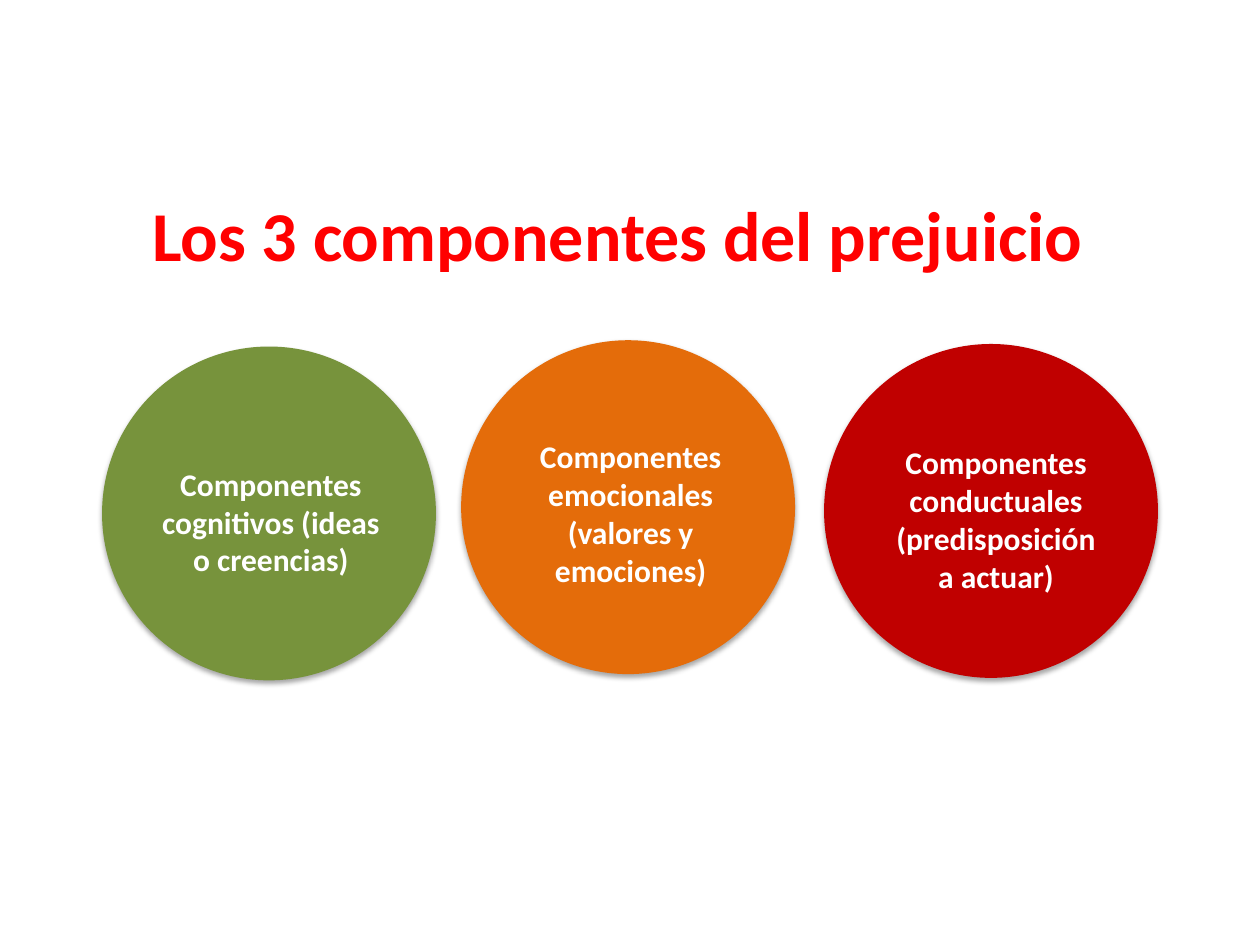
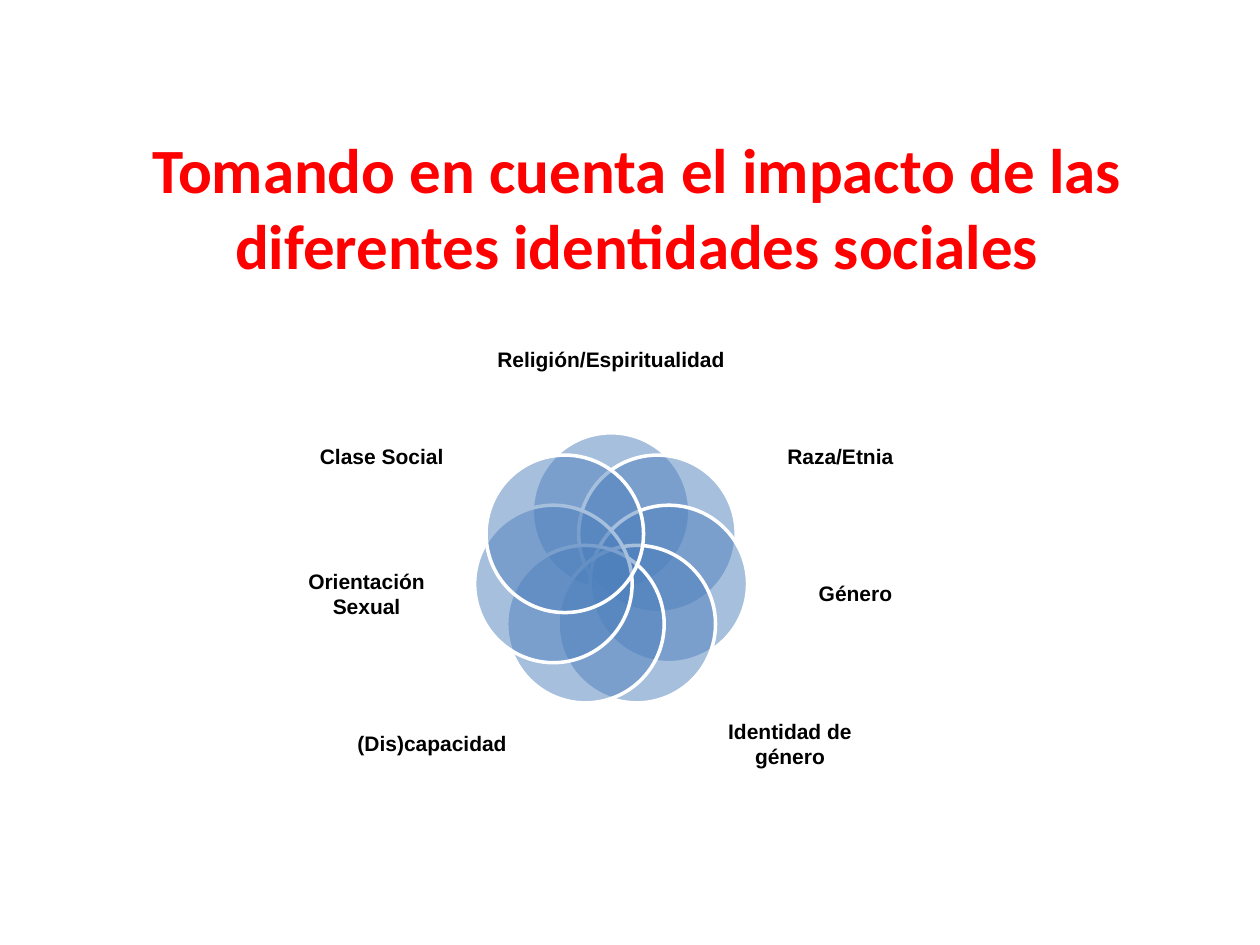
from collections import namedtuple
from math import cos, pi, sin

from lxml.etree import SubElement
from pptx import Presentation
from pptx.dml.color import RGBColor
from pptx.enum.shapes import MSO_SHAPE as Preset
from pptx.enum.text import MSO_ANCHOR as Anchor, PP_ALIGN as Align
from pptx.oxml.ns import qn
from pptx.util import Emu, Inches, Pt

Box = namedtuple("Box", "left top width height")
TextStyle = namedtuple("TextStyle", "font size color")


class Theme:
    title = TextStyle("Calibri", 40, "FF0000")
    long_title = TextStyle("Calibri", 36, "FF0000")
    component = TextStyle("Calibri", 18, "FFFFFF")
    identity = TextStyle("Arial", 12, "000000")
    cognitive, emotional, behavioural = "77933C", "E46C0A", "C00000"
    petal, petal_outline, shadow = "4F81BD", "FFFFFF", "000000"


DISC_SIZE = 2.65
# Colour, disc corner, label box relative to the disc, wording
COMPONENTS = [
    (Theme.cognitive, (0.81, 2.75), Box(0.17, 0.89, 2.15, 1.01),
     "Componentes cognitivos (ideas o creencias)"),
    (Theme.emotional, (3.66, 2.7), Box(0.11, 0.72, 2.28, 1.31),
     "Componentes emocionales (valores y emociones)"),
    (Theme.behavioural, (6.54, 2.73), Box(0.25, 0.74, 2.04, 1.31),
     "Componentes conductuales (predisposición a actuar)"),
]

PETAL_SIZE, PETAL_ORBIT = 1.25, 0.47
IDENTITIES = ["Religión/Espiritualidad", "Raza/Etnia", "Género", "Identidad de género",
              "(Dis)capacidad", "Orientación Sexual", "Clase Social"]
# Label centres relative to the flower's centre, from the top down its right side
LABEL_ROWS = [Box(0, -1.68, 1.93, 1.21), Box(1.82, -0.91, 1.36, 0.85),
              Box(1.94, 0.18, 1.33, 0.9), Box(1.42, 1.37, 1.44, 0.83)]


def inches(box):
    return [Inches(value) for value in box]


def add_text(shapes, box, text, style, align=Align.CENTER, indent=0):
    frame = shapes.add_textbox(*inches(box)).text_frame
    frame.word_wrap = True
    para = frame.paragraphs[0]
    para.text = text
    para.alignment = align
    if indent:
        para._p.get_or_add_pPr().set("marL", str(Inches(indent)))
    font = para.font
    font.name, font.size, font.bold = style.font, Pt(style.size), True
    font.color.rgb = RGBColor.from_string(style.color)
    return frame


def add_disc(shapes, box, color):
    disc = shapes.add_shape(Preset.OVAL, *inches(box))
    disc.shadow.inherit = False
    disc.fill.solid()
    disc.fill.fore_color.rgb = RGBColor.from_string(color)
    disc.line.fill.background()
    return disc


def set_alpha(color_element, percent):
    SubElement(color_element, qn("a:alpha"), val=str(percent * 1000))


def drop_shadow(shape):
    effects = shape._element.spPr.find(qn("a:effectLst"))
    shadow = SubElement(effects, qn("a:outerShdw"), blurRad=str(Pt(3.1)),
                        dist=str(Pt(1.8)), dir=str(90 * 60000), rotWithShape="0")
    set_alpha(SubElement(shadow, qn("a:srgbClr"), val=Theme.shadow), 35)


def add_component(page, color, corner, label, text):
    left, top = corner
    shapes = page.shapes.add_group_shape().shapes
    drop_shadow(add_disc(shapes, Box(left, top, DISC_SIZE, DISC_SIZE), color))
    label_box = label._replace(left=left + label.left, top=top + label.top)
    add_text(shapes, label_box, text, Theme.component, indent=0.19)


def add_petal(shapes, center_x, center_y):
    box = Box(center_x - PETAL_SIZE / 2, center_y - PETAL_SIZE / 2, PETAL_SIZE, PETAL_SIZE)
    petal = add_disc(shapes, box, Theme.petal)
    set_alpha(petal._element.spPr.find(qn("a:solidFill")).find(qn("a:srgbClr")), 50)
    petal.line.color.rgb = RGBColor.from_string(Theme.petal_outline)
    petal.line.width = Pt(2)


def add_identity_label(shapes, center_x, center_y, size, text):
    width, height = size
    box = Box(center_x - width / 2, center_y - height / 2, width, height)
    frame = add_text(shapes, box, text, Theme.identity)
    frame.vertical_anchor = Anchor.MIDDLE
    frame.margin_left = frame.margin_right = frame.margin_top = frame.margin_bottom = Emu(0)


def add_identity_flower(page, center_x, center_y):
    """Overlapping petals, clockwise from the top; left labels mirror the right ones."""
    shapes = page.shapes.add_group_shape().shapes
    mirrored = [row._replace(left=-row.left) for row in reversed(LABEL_ROWS[1:])]
    for index, (text, row) in enumerate(zip(IDENTITIES, LABEL_ROWS + mirrored)):
        angle = 2 * pi * index / len(IDENTITIES)
        add_petal(shapes, center_x + PETAL_ORBIT * sin(angle),
                  center_y - PETAL_ORBIT * cos(angle))
        add_identity_label(shapes, center_x + row.left, center_y + row.top, row[2:], text)


def build_components_slide(page):
    add_text(page.shapes, Box(1.11, 1.47, 9, 0.9), "Los 3 componentes del prejuicio",
             Theme.title, Align.LEFT)
    for component in COMPONENTS:
        add_component(page, *component)


def build_identities_slide(page):
    add_text(page.shapes, Box(0.93, 0.99, 8.25, 0.98),
             "Tomando en cuenta el impacto de las diferentes identidades sociales",
             Theme.long_title)
    add_identity_flower(page, 4.85, 4.53)


def main():
    deck = Presentation()
    deck.slide_width, deck.slide_height = Inches(10), Inches(7.5)
    blank = deck.slide_layouts[6]
    for build in (build_components_slide, build_identities_slide):
        build(deck.slides.add_slide(blank))
    deck.save("out.pptx")


if __name__ == "__main__":
    main()
